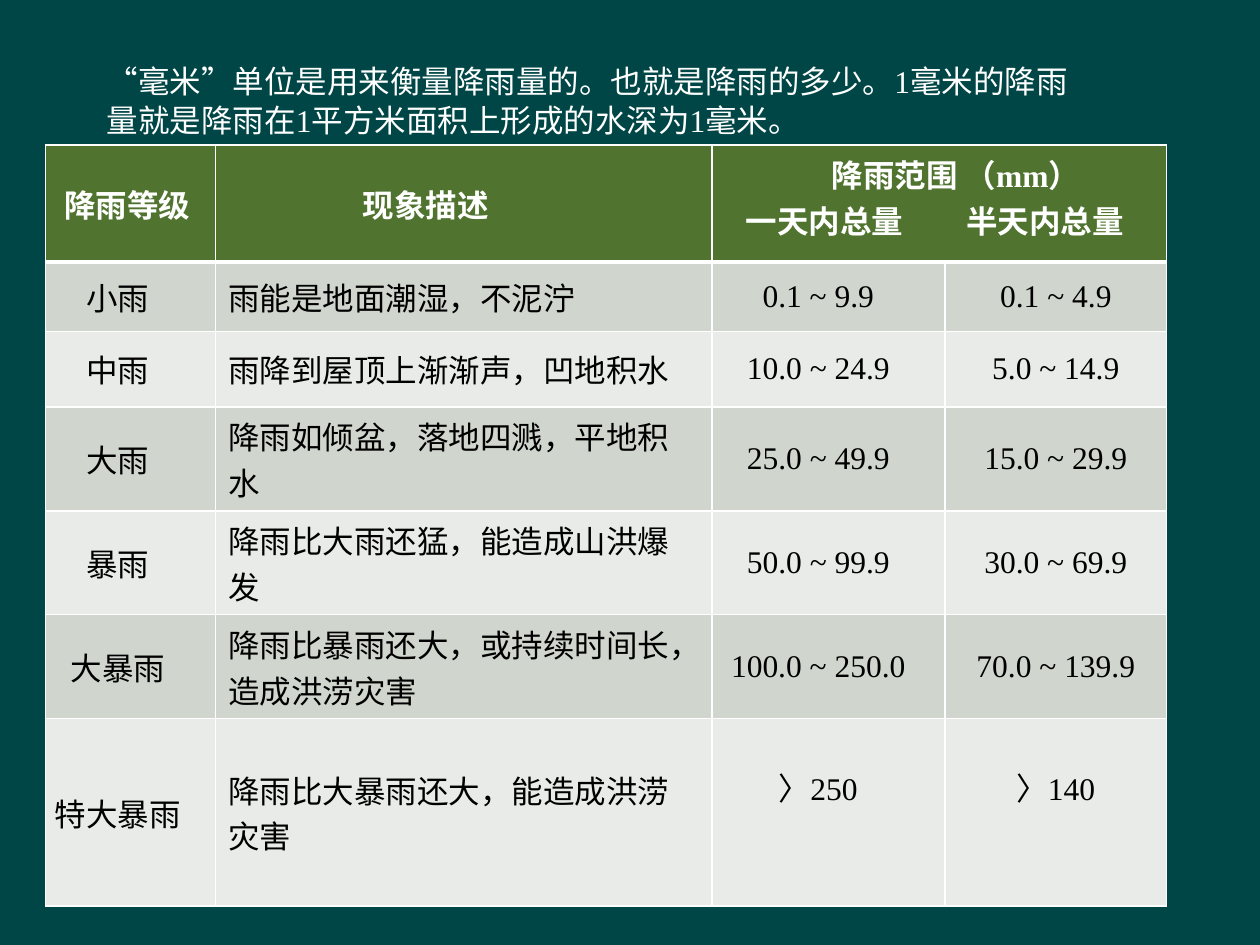
from lxml.etree import SubElement
from pptx import Presentation
from pptx.dml.color import RGBColor
from pptx.enum.text import MSO_ANCHOR, PP_ALIGN
from pptx.oxml import parse_xml
from pptx.oxml.ns import nsdecls, qn
from pptx.util import Inches, Pt

BACKGROUND = RGBColor(0x00, 0x46, 0x46)
HEADER = RGBColor(0x50, 0x74, 0x2F)
BAND_DARK = RGBColor(0xD0, 0xD6, 0xCD)
BAND_LIGHT = RGBColor(0xE9, 0xEB, 0xE8)
WHITE = RGBColor(0xFF, 0xFF, 0xFF)
BLACK = RGBColor(0x00, 0x00, 0x00)
FONT = "Times New Roman"


def style_paragraph(paragraph, color, bold=False):
    paragraph.font.name = FONT
    paragraph.font.size = Pt(18)
    paragraph.font.bold = bold
    paragraph.font.color.rgb = color


def set_borders(cell, top, bottom):
    properties = cell._tc.get_or_add_tcPr()
    widths = {"lnL": 1, "lnR": 1, "lnT": top, "lnB": bottom}
    for index, (side, width) in enumerate(widths.items()):
        properties.insert(index, parse_xml(
            f'<a:{side} {nsdecls("a")} w="{Pt(width)}"><a:solidFill>'
            f'<a:srgbClr val="{WHITE}"/></a:solidFill></a:{side}>'))


presentation = Presentation()
presentation.slide_width = Inches(10)
presentation.slide_height = Inches(7.5)
slide = presentation.slides.add_slide(presentation.slide_layouts[6])
slide.background.fill.solid()
slide.background.fill.fore_color.rgb = BACKGROUND

# Rainfall table
ROWS = [
    ("降雨等级", "现象描述", "降雨范围 （mm）\n一天内总量\t半天内总量", ""),
    ("小雨", "雨能是地面潮湿，不泥泞", "0.1 ~ 9.9", "0.1 ~ 4.9"),
    ("中雨", "雨降到屋顶上渐渐声，凹地积水", "10.0 ~ 24.9", "5.0 ~ 14.9"),
    ("大雨", "降雨如倾盆，落地四溅，平地积水", "25.0 ~ 49.9", "15.0 ~ 29.9"),
    ("暴雨", "降雨比大雨还猛，能造成山洪爆发", "50.0 ~ 99.9", "30.0 ~ 69.9"),
    ("大暴雨", "降雨比暴雨还大，或持续时间长，造成洪涝灾害",
     "100.0 ~ 250.0", "70.0 ~ 139.9"),
    ("特大暴雨", "降雨比大暴雨还大，能造成洪涝灾害", "〉250", "〉140"),
]
COLUMN_WIDTHS = [1.35, 3.94, 1.85, 1.76]
ROW_HEIGHTS = [0.93, 0.55, 0.6, 0.8, 0.8, 0.8, 1.49]
SIDE_MARGINS = [(0.05, 0.25), (0.1, 0.1), (0.1, 0.26), (0.1, 0.1)]
HEADER_MARGINS = [(0.05, 0.1), (0.1, 0.7), (0.27, 0.1), (0.1, 0.1)]
LAST_ROW = len(ROWS) - 1

table = slide.shapes.add_table(
    len(ROWS), len(COLUMN_WIDTHS), Inches(0.36), Inches(1.15),
    Inches(sum(COLUMN_WIDTHS)), Inches(sum(ROW_HEIGHTS))).table
for column, width in zip(table.columns, COLUMN_WIDTHS):
    column.width = Inches(width)
for row, height in zip(table.rows, ROW_HEIGHTS):
    row.height = Inches(height)
table.cell(0, 2).merge(table.cell(0, 3))

for r, texts in enumerate(ROWS):
    is_header = r == 0
    band = HEADER if is_header else BAND_DARK if r % 2 else BAND_LIGHT
    margins = HEADER_MARGINS if is_header else SIDE_MARGINS
    for c, text in enumerate(texts):
        cell = table.cell(r, c)
        cell.fill.solid()
        cell.fill.fore_color.rgb = band
        set_borders(cell, top=3 if r == 1 else 1, bottom=3 if is_header else 1)
        left, right = margins[c]
        cell.margin_left, cell.margin_right = Inches(left), Inches(right)
        cell.vertical_anchor = MSO_ANCHOR.MIDDLE
        if cell.is_spanned:
            continue
        cell.text = text
        centered = c < 2 if is_header else c != 1
        for paragraph in cell.text_frame.paragraphs:
            paragraph.alignment = PP_ALIGN.CENTER if centered else PP_ALIGN.LEFT
            style_paragraph(paragraph, WHITE if is_header else BLACK, is_header)

# Range heading: indented title above two tabbed subheadings
range_cell = table.cell(0, 2)
range_cell.vertical_anchor = MSO_ANCHOR.TOP
title, subheadings = range_cell.text_frame.paragraphs
title._p.get_or_add_pPr().set("marL", str(Inches(0.68)))
tab_list = parse_xml(f'<a:tabLst {nsdecls("a")}/>')
SubElement(tab_list, qn("a:tab"), pos=str(Inches(1.75)), algn="l")
subheadings._p.get_or_add_pPr().insert(0, tab_list)

# Values of the last row sit above the middle
for c in (2, 3):
    cell = table.cell(LAST_ROW, c)
    cell.vertical_anchor = MSO_ANCHOR.TOP
    cell.margin_top = Inches(0.36)

# Explanation above the table
text_box = slide.shapes.add_textbox(
    Inches(0.75), Inches(0.44), Inches(7.95), Inches(0.71))
text_box.text_frame.word_wrap = True
paragraph = text_box.text_frame.paragraphs[0]
paragraph.text = ("“毫米”单位是用来衡量降雨量的。也就是降雨的多少。"
                  "1毫米的降雨量就是降雨在1平方米面积上形成的水深为1毫米。")
paragraph.line_spacing = Pt(22)
style_paragraph(paragraph, WHITE)

presentation.save("out.pptx")
